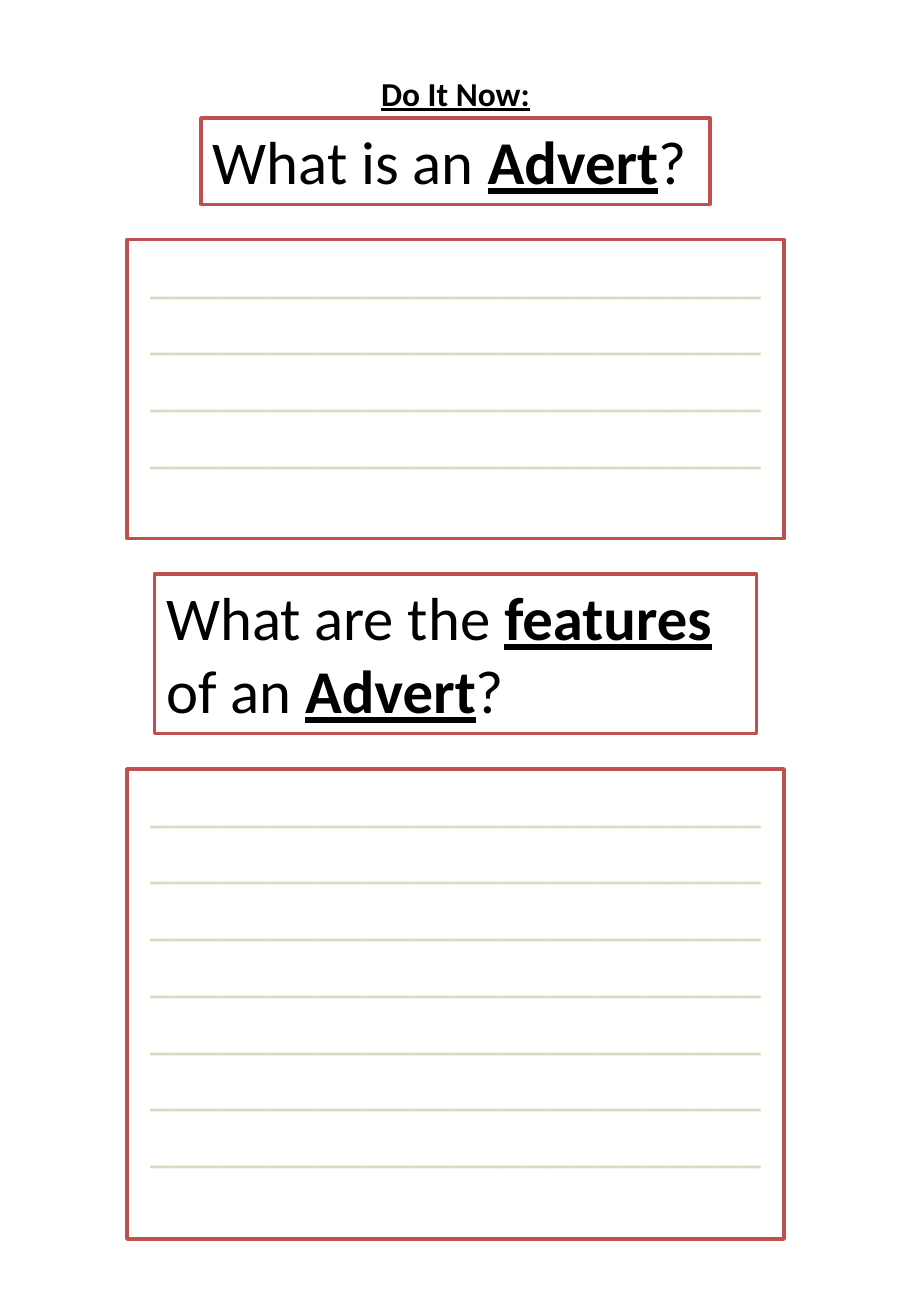
from pptx import Presentation
from pptx.dml.color import RGBColor
from pptx.enum.shapes import MSO_SHAPE
from pptx.enum.text import MSO_ANCHOR, MSO_AUTO_SIZE, PP_ALIGN
from pptx.util import Inches, Pt

# Content: each paragraph is a list of (text, stressed) runs
TITLE = [[("Do It Now:", True)]]
WHAT = [[("What is an ", False), ("Advert", True), ("?", False)]]
PARTS = [
    [("What are the ", False), ("features", True), (" ", False)],
    [("of an ", False), ("Advert", True), ("?", False)],
]
RULE = "_" * 26


def rules(count):
    """First rule on its own, the rest wrapping in one paragraph."""
    return [[(RULE, False)], [(RULE * (count - 1), False)]]


# Boxes from top to bottom: kind, paragraphs, width %, height %
BOXES = [
    ("ask", WHAT, 55.87, 6.56),
    ("answer", rules(4), 72.13, 22.71),
    ("ask", PARTS, 66.13, 12.1),
    ("answer", rules(7), 72.13, 35.73),
]
TOP, GAP = 8.96, 2.7
TITLE_TOP, TITLE_WIDE = 5.72, 89.33

COLORS = {"paper": "FFFFFF", "edge": "C0504D", "ink": "000000", "rule": "DDD9C3"}

# Text style: size, colour, alignment
STYLES = {
    "title": (19.8, "ink", PP_ALIGN.CENTER),
    "ask": (36, "ink", PP_ALIGN.LEFT),
    "answer": (28, "rule", PP_ALIGN.CENTER),
}

deck = Presentation()
deck.slide_width, deck.slide_height = Inches(7.5), Inches(10.83)
slide = deck.slides.add_slide(deck.slide_layouts[6])


def color(name):
    return RGBColor.from_string(COLORS[name])


def place(top, wide, high):
    """Turn slide percentages into a centred frame."""
    across, down = deck.slide_width / 100, deck.slide_height / 100
    left = (100 - wide) / 2
    return [int(v) for v in (left * across, top * down, wide * across, high * down)]


def write(shape, kind, paras, anchor=MSO_ANCHOR.TOP):
    size, ink, align = STYLES[kind]
    frame = shape.text_frame
    frame.word_wrap = True
    frame.auto_size = MSO_AUTO_SIZE.NONE
    frame.vertical_anchor = anchor
    for i, runs in enumerate(paras):
        para = frame.add_paragraph() if i else frame.paragraphs[0]
        para.alignment = align
        for text, stress in runs:
            run = para.add_run()
            run.text = text
            font = run.font
            font.name, font.size = "Calibri", Pt(size)
            font.bold = font.underline = stress
            font.color.rgb = color(ink)


# Question and answer boxes
top = TOP
for kind, paras, wide, high in BOXES:
    box = slide.shapes.add_shape(MSO_SHAPE.RECTANGLE, *place(top, wide, high))
    box.shadow.inherit = False
    box.fill.solid()
    box.fill.fore_color.rgb = color("paper")
    box.line.color.rgb = color("edge")
    box.line.width = Pt(2)
    write(box, kind, paras)
    top += high + GAP

# Title
head = slide.shapes.add_textbox(*place(TITLE_TOP, TITLE_WIDE, TOP - TITLE_TOP))
write(head, "title", TITLE, MSO_ANCHOR.BOTTOM)
head.text_frame.paragraphs[0].line_spacing = 0.7

deck.save("out.pptx")
